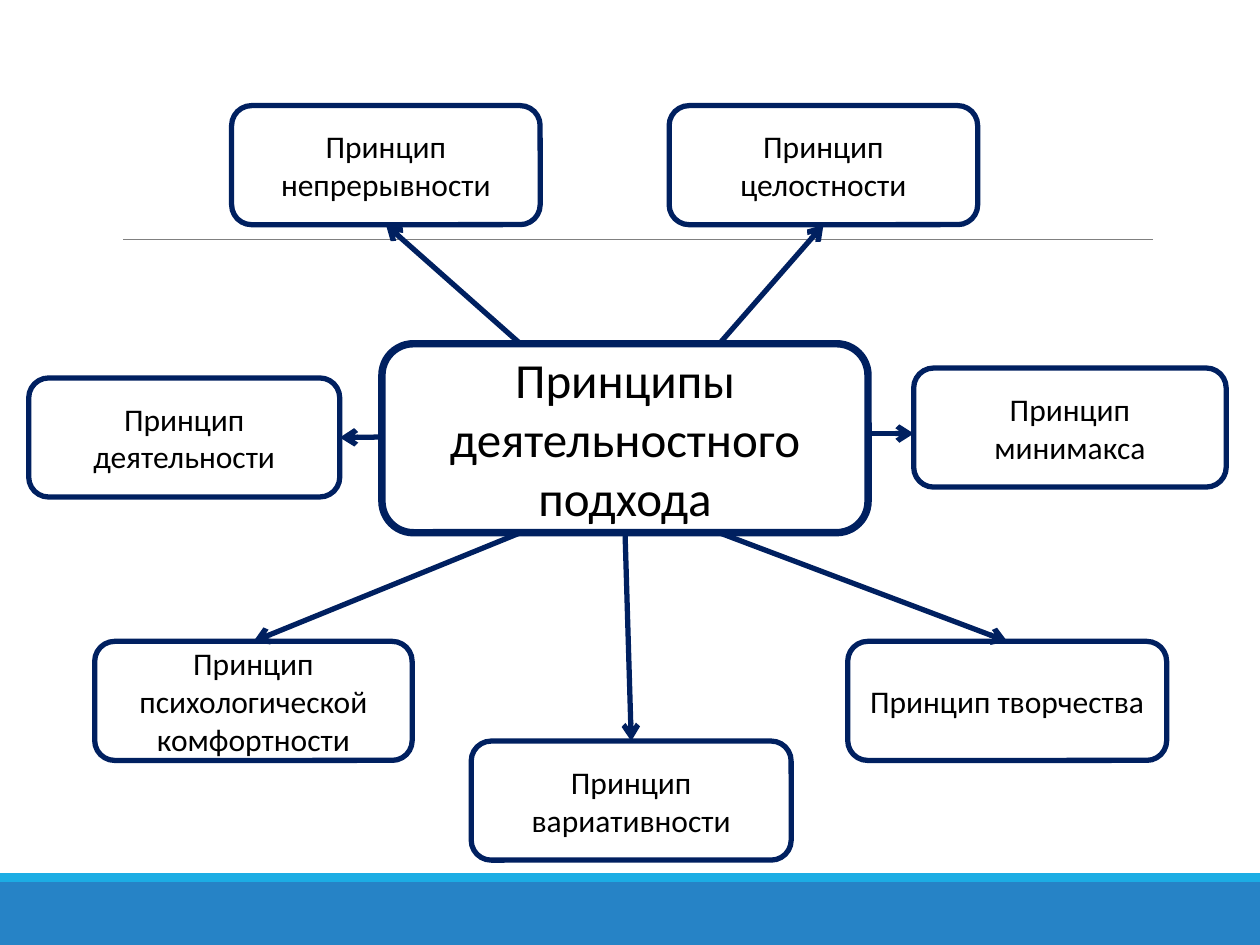
from pptx import Presentation
from pptx.dml.color import RGBColor
from pptx.enum.shapes import MSO_CONNECTOR, MSO_SHAPE
from pptx.enum.text import MSO_ANCHOR, PP_ALIGN
from pptx.oxml.ns import qn
from pptx.util import Cm, Pt
from lxml import etree

RECT, ROUNDED = MSO_SHAPE.RECTANGLE, MSO_SHAPE.ROUNDED_RECTANGLE
STRAIGHT = MSO_CONNECTOR.STRAIGHT
MIDDLE, CENTER = MSO_ANCHOR.MIDDLE, PP_ALIGN.CENTER
TOP, LEFT, BOTTOM, RIGHT = range(4)

WHITE = RGBColor(0xFF, 0xFF, 0xFF)
BLACK = RGBColor(0x00, 0x00, 0x00)
NAVY = RGBColor(0x00, 0x20, 0x60)
BLUE = RGBColor(0x26, 0x83, 0xC6)
CYAN = RGBColor(0x1C, 0xAD, 0xE4)
GRAY = RGBColor(0x80, 0x80, 0x80)

prs = Presentation()
prs.slide_width, prs.slide_height = Cm(25.4), Cm(19.05)
s = prs.slides.add_slide(prs.slide_layouts[6])


def add_box(text, x, y, w, h, size, weight):
    sp = s.shapes.add_shape(ROUNDED, Cm(x), Cm(y), Cm(w), Cm(h))
    sp.shadow.inherit = False
    sp.fill.solid()
    sp.fill.fore_color.rgb = WHITE
    sp.line.color.rgb = NAVY
    sp.line.width = Pt(weight)
    tf = sp.text_frame
    tf.word_wrap = True
    tf.vertical_anchor = MIDDLE
    tf.text = text
    p = tf.paragraphs[0]
    p.alignment = CENTER
    font = p.runs[0].font
    font.name, font.size, font.color.rgb = "Calibri", Pt(size), BLACK
    return sp


def add_line(x1, y1, x2, y2, color, weight):
    cn = s.shapes.add_connector(STRAIGHT, Cm(x1), Cm(y1), Cm(x2), Cm(y2))
    cn.line.color.rgb = color
    cn.line.width = Pt(weight)
    etree.SubElement(cn._element.spPr, qn("a:effectLst"))
    return cn


# Footer bands and rule
for y, h, color in [(17.78, 1.27, BLUE), (17.6, 0.18, CYAN)]:
    sp = s.shapes.add_shape(RECT, 0, Cm(y), prs.slide_width, Cm(h))
    sp.shadow.inherit = False
    sp.fill.solid()
    sp.fill.fore_color.rgb = color
    sp.line.fill.background()
add_line(2.48, 4.83, 23.24, 4.83, GRAY, 0.5)

# Central box
center = add_box("Принципы деятельностного подхода", 7.7, 6.93, 9.8, 3.81, 28, 4.25)

# Principles: text, left, top, width, arrow start, side the arrow ends at
principles = [
    ("Принцип деятельности", 0.58, 7.62, 6.27, (7.7, 8.81), RIGHT),
    ("Принцип непрерывности", 4.67, 2.13, 6.22, (10.49, 6.93), BOTTOM),
    ("Принцип целостности", 13.49, 2.13, 6.22, (14.5, 6.93), BOTTOM),
    ("Принцип минимакса", 18.42, 7.42, 6.3, (17.5, 8.74), None),
    ("Принцип вариативности", 9.5, 14.94, 6.45, (12.6, 10.74), TOP),
    ("Принцип творчества", 17.09, 12.93, 6.43, (14.5, 10.74), TOP),
    ("Принцип психологической комфортности", 1.91, 12.93, 6.4, (10.49, 10.74), TOP),
]
boxes = [add_box(text, x, y, w, 2.4, 18, 3) for text, x, y, w, _, _ in principles]

# Arrows from the central box; the one without a side runs level
for box, (_, x, _, _, (x1, y1), side) in zip(boxes, principles):
    cn = add_line(x1, y1, x, y1, NAVY, 3)
    if side is not None:
        cn.end_connect(box, side)
    if x1 == 12.6:
        cn.begin_connect(center, BOTTOM)
    etree.SubElement(cn.line._get_or_add_ln(), qn("a:tailEnd"), type="arrow")

prs.save("out.pptx")
